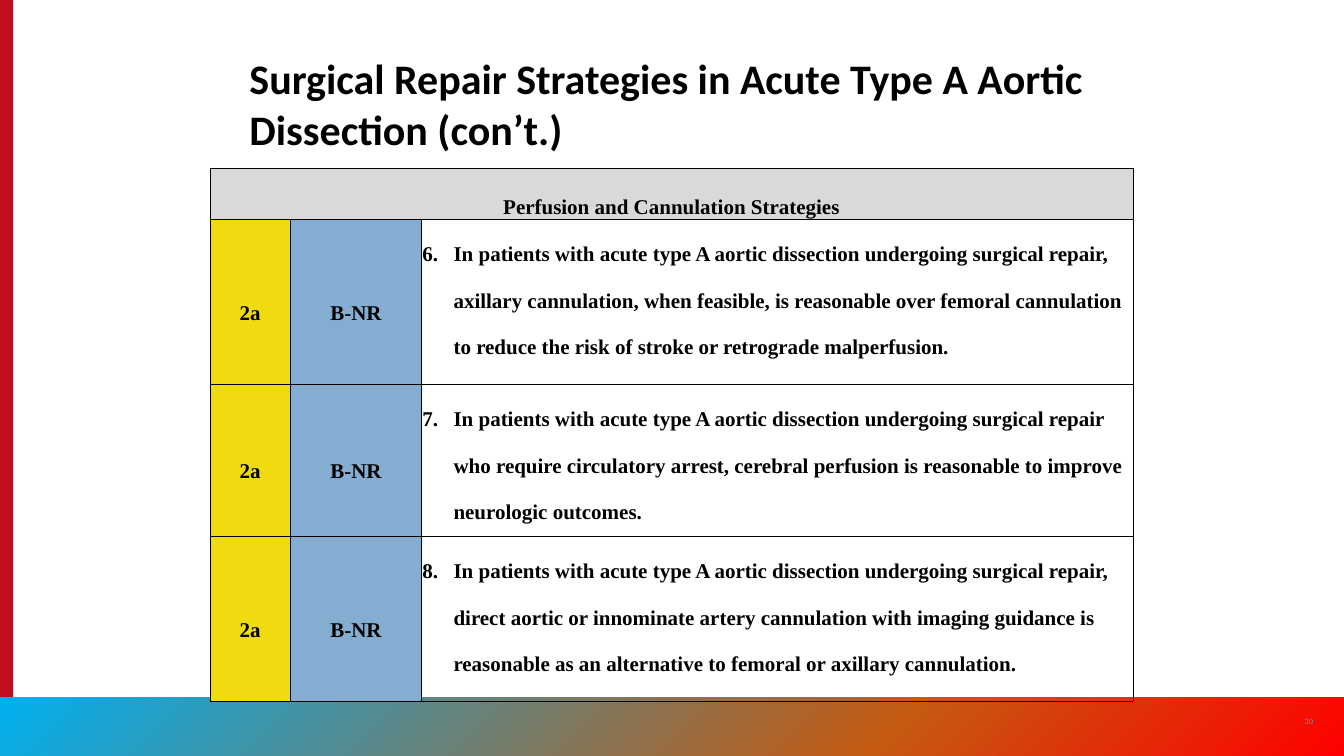
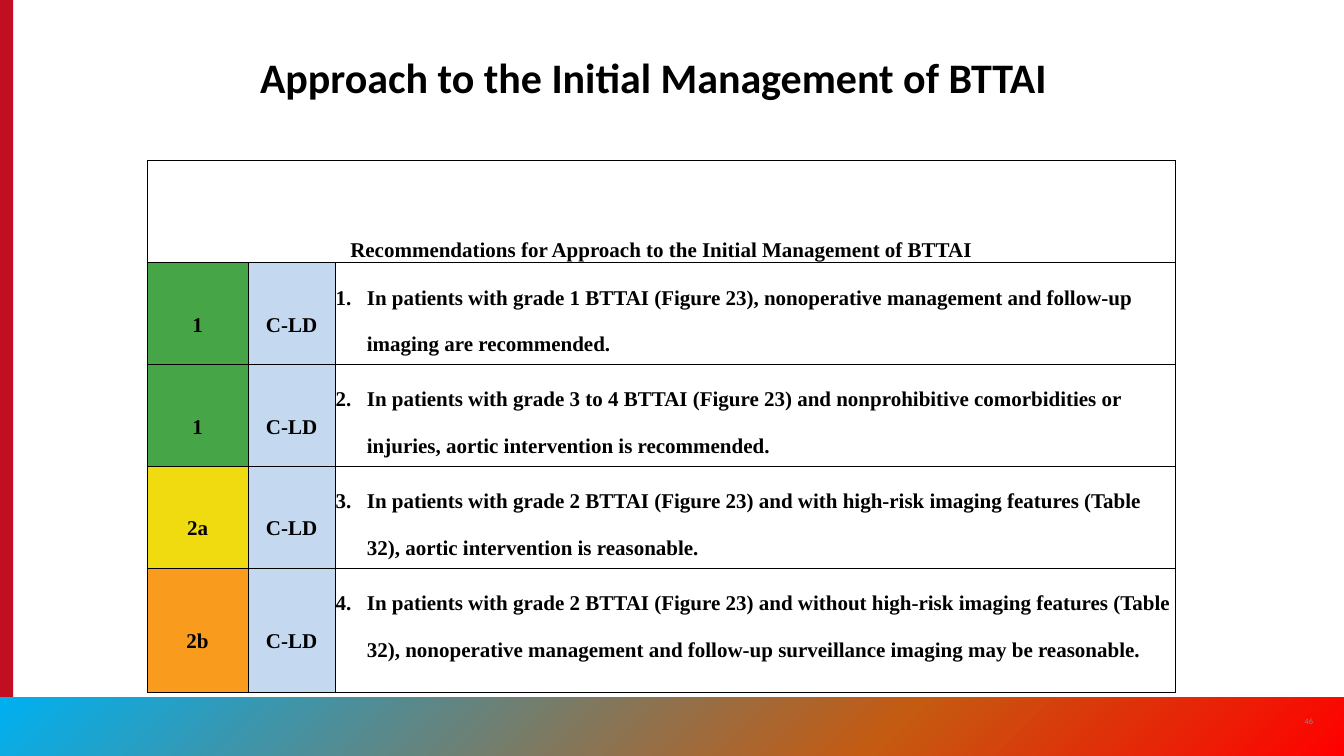
from dataclasses import dataclass
from lxml.etree import SubElement
from pptx import Presentation
from pptx.dml.color import RGBColor
from pptx.enum.shapes import MSO_SHAPE
from pptx.enum.text import MSO_ANCHOR, PP_ALIGN
from pptx.oxml import parse_xml
from pptx.oxml.ns import nsdecls, qn
from pptx.util import Inches, Pt


@dataclass(frozen=True)
class Theme:
    width: float = 26.67
    height: float = 15
    stripe: str = "C10E21"
    band: tuple = ((0, "00B0F0"), (66, "C55A11"), (100, "FF0000"))
    ink: str = "000000"
    muted: str = "8A8B8A"
    header: str = "D9D9D9"
    heading_font: str = "Calibri"
    table_font: str = "Times New Roman"
    title_size: int = 60
    table_size: int = 30
    number_size: int = 12
    inset: float = 0.08
    cell_inset: float = 0.01
    hanging: float = 0.62


T = Theme()

# Colours for class of recommendation and level of evidence
CLASS_FILL = {"1": "45A547", "2a": "F0DA10", "2b": "F99B1C"}
LEVEL_FILL = {"B-NR": "85ADD1", "C-LD": "C4D9F0"}

TITLE_FORMAT = {"name": T.heading_font, "size": Pt(T.title_size), "bold": True}
NUMBER_FORMAT = {"name": T.heading_font, "size": Pt(T.number_size)}
TABLE_FORMAT = {"name": T.table_font, "size": Pt(T.table_size), "bold": True}


def set_attrs(obj, values):
    for name, value in values.items():
        setattr(obj, name, value)


def write(p, text, fmt, color=T.ink):
    r = p.add_run()
    r.text = text
    set_attrs(r.font, fmt)
    r.font.color.rgb = RGBColor.from_string(color)


def add_text(s, box, text, fmt, color=T.ink, wrap=True, **layout):
    tf = s.shapes.add_textbox(*map(Inches, box)).text_frame
    margins = dict.fromkeys(
        ("margin_left", "margin_right", "margin_top", "margin_bottom"), Inches(T.inset))
    set_attrs(tf, {"word_wrap": wrap, **margins,
                   "vertical_anchor": layout.get("anchor", MSO_ANCHOR.TOP)})
    p = tf.paragraphs[0]
    p.alignment = layout.get("align", PP_ALIGN.LEFT)
    write(p, text, fmt, color)


def add_bar(s, *box):
    sp = s.shapes.add_shape(MSO_SHAPE.RECTANGLE, *map(Inches, box))
    sp.shadow.inherit = False
    sp.line.fill.background()
    return sp


def add_frame(s, number):
    """Red side stripe, gradient footer band and slide number."""
    stripe = add_bar(s, 0, 0, 0.26, T.height)
    stripe.fill.solid()
    stripe.fill.fore_color.rgb = RGBColor.from_string(T.stripe)

    band = add_bar(s, 0, 13.83, T.width, 1.17)
    stops = "".join(f'<a:gs pos="{pos * 1000}"><a:srgbClr val="{color}"/></a:gs>'
                    for pos, color in T.band)
    geometry = band._element.spPr.find(qn("a:prstGeom"))
    geometry.addnext(parse_xml(
        f'<a:gradFill {nsdecls("a")} rotWithShape="1"><a:gsLst>{stops}</a:gsLst>'
        '<a:lin ang="2700000" scaled="0"/></a:gradFill>'))

    add_text(s, (25.79, 14.12, 0.37, 0.36), number, NUMBER_FORMAT, T.muted, wrap=False,
             anchor=MSO_ANCHOR.MIDDLE, align=PP_ALIGN.CENTER)


def style_cell(cell, fill=None, anchor=MSO_ANCHOR.MIDDLE):
    set_attrs(cell, dict.fromkeys(
        ("margin_left", "margin_right", "margin_top", "margin_bottom"),
        Inches(T.cell_inset)))
    cell.vertical_anchor = anchor
    # Borders come before the fill in the cell properties
    tcPr = cell._tc.get_or_add_tcPr()
    for side in ("lnL", "lnR", "lnT", "lnB"):
        tcPr.append(parse_xml(
            f'<a:{side} {nsdecls("a")} w="{Pt(1)}"><a:solidFill>'
            f'<a:srgbClr val="{T.ink}"/></a:solidFill></a:{side}>'))
    if fill:
        cell.fill.solid()
        cell.fill.fore_color.rgb = RGBColor.from_string(fill)
    else:
        cell.fill.background()


def fill_cell(cell, text, number=None):
    p = cell.text_frame.paragraphs[0]
    set_attrs(p, {"line_spacing": 2.0,
                  "alignment": PP_ALIGN.LEFT if number else PP_ALIGN.CENTER})
    if number:
        pPr = p._p.get_or_add_pPr()
        pPr.set("marL", str(Inches(T.hanging)))
        pPr.set("indent", str(-Inches(T.hanging)))
        SubElement(pPr, qn("a:buFont"), typeface="+mj-lt")
        SubElement(pPr, qn("a:buAutoNum"), type="arabicPeriod", startAt=str(number))
    write(p, text, TABLE_FORMAT)


def add_recommendations(s, left, top, cols, heights, header, header_fill, first, level, rows):
    """Table of class, level and numbered advice under one merged header."""
    frame = s.shapes.add_table(len(rows) + 1, len(cols), Inches(left), Inches(top),
                               Inches(sum(cols)), Inches(sum(heights)))
    table = frame.table
    set_attrs(table, {"first_row": False, "horz_banding": False})
    for column, width in zip(table.columns, cols):
        column.width = Inches(width)
    for row, height in zip(table.rows, heights):
        row.height = Inches(height)

    for cell in table.rows[0].cells:
        style_cell(cell, header_fill, MSO_ANCHOR.BOTTOM)
    table.cell(0, 0).merge(table.cell(0, len(cols) - 1))
    fill_cell(table.cell(0, 0), header)

    for i, (grade, advice) in enumerate(rows, 1):
        grade_cell, level_cell, advice_cell = table.rows[i].cells
        style_cell(grade_cell, CLASS_FILL[grade])
        fill_cell(grade_cell, grade)
        style_cell(level_cell, LEVEL_FILL[level])
        fill_cell(level_cell, level)
        style_cell(advice_cell, anchor=MSO_ANCHOR.TOP)
        fill_cell(advice_cell, advice, first + i - 1)


SLIDES = [
    {
        "number": "30",
        "title": "Surgical Repair Strategies in Acute Type A Aortic Dissection (con’t.)",
        "title_box": (4.87, 0.97, 16.92, 2.17),
        "table": {
            "left": 4.17, "top": 3.33, "cols": (1.59, 2.61, 14.11),
            "heights": (0.73, 3.27, 2.6, 3.27),
            "header": "Perfusion and Cannulation Strategies", "header_fill": T.header,
            "first": 6, "level": "B-NR",
            "rows": [
                ("2a", "In patients with acute type A aortic dissection undergoing surgical "
                       "repair, axillary cannulation, when feasible, is reasonable over femoral "
                       "cannulation to reduce the risk of stroke or retrograde malperfusion."),
                ("2a", "In patients with acute type A aortic dissection undergoing surgical "
                       "repair who require circulatory arrest, cerebral perfusion is reasonable "
                       "to improve neurologic outcomes."),
                ("2a", "In patients with acute type A aortic dissection undergoing surgical "
                       "repair, direct aortic or innominate artery cannulation with imaging "
                       "guidance is reasonable as an alternative to femoral or axillary "
                       "cannulation."),
            ],
        },
    },
    {
        "number": "46",
        "title": "Approach to the Initial Management of BTTAI",
        "title_box": (5.08, 0.95, 16.08, 2.17),
        "table": {
            "left": 2.92, "top": 3.19, "cols": (2, 1.73, 16.67),
            "heights": (2.02, 1.55, 1.96, 1.55, 2.47),
            "header": "Recommendations for Approach to the Initial Management of BTTAI",
            "header_fill": None, "first": 1, "level": "C-LD",
            "rows": [
                ("1", "In patients with grade 1 BTTAI (Figure 23), nonoperative management and "
                      "follow-up imaging are recommended."),
                ("1", "In patients with grade 3 to 4 BTTAI (Figure 23) and nonprohibitive "
                      "comorbidities or injuries, aortic intervention is recommended."),
                ("2a", "In patients with grade 2 BTTAI (Figure 23) and with high-risk imaging "
                       "features (Table 32), aortic intervention is reasonable."),
                ("2b", "In patients with grade 2 BTTAI (Figure 23) and without high-risk imaging "
                       "features (Table 32), nonoperative management and follow-up surveillance "
                       "imaging may be reasonable."),
            ],
        },
    },
]


def main():
    prs = Presentation()
    set_attrs(prs, {"slide_width": Inches(T.width), "slide_height": Inches(T.height)})
    for content in SLIDES:
        s = prs.slides.add_slide(prs.slide_layouts[6])
        add_frame(s, content["number"])
        add_text(s, content["title_box"], content["title"], TITLE_FORMAT)
        add_recommendations(s, **content["table"])
    prs.save("out.pptx")


if __name__ == "__main__":
    main()
